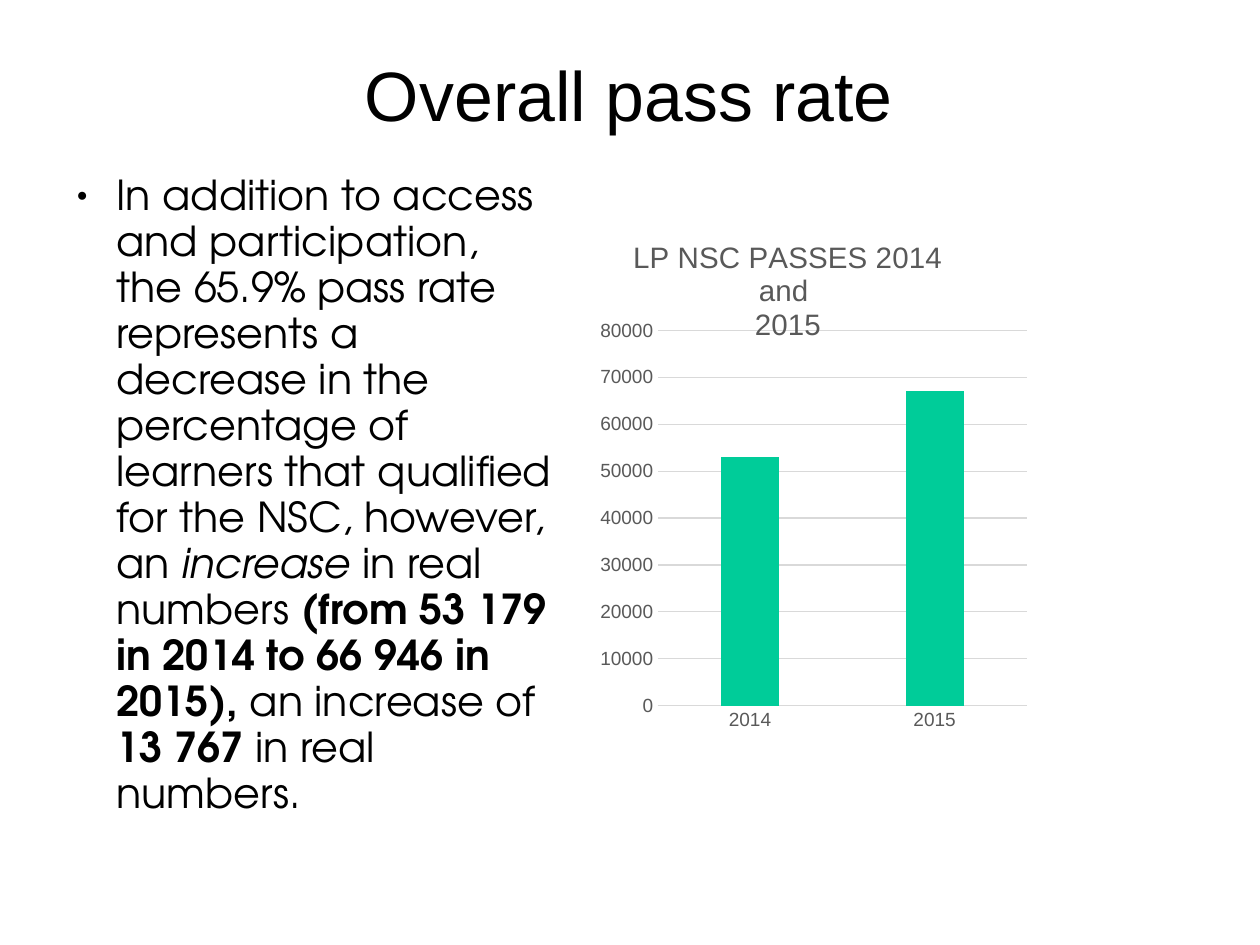
from dataclasses import dataclass

from lxml import etree
from pptx import Presentation
from pptx import util as u
from pptx.chart import data as chart_data
from pptx.dml.color import RGBColor
from pptx.enum import chart as charts, text
from pptx.oxml import ns


@dataclass(frozen=True)
class Theme:
    ink: str = "000000"
    muted: str = "595959"
    grid: str = "D9D9D9"
    bar: str = "00CC99"
    heading_font: str = "Arial"
    body_font: str = "TeX Gyre Adventor"
    title_size: float = 44
    body_size: float = 26
    chart_title_size: float = 18.6
    axis_size: float = 12
    line_spacing: float = 0.93


THEME = Theme()

PASS_RATE_RUNS = [
    ("In addition to access and participation, the 65.9% pass rate represents "
     "a decrease in the percentage of learners that qualified for the NSC, "
     "however, an ", {}),
    ("increase ", {"italic": True}),
    ("in real numbers ", {}),
    ("(from 53 179 in 2014 to 66 946 in 2015), ", {"bold": True}),
    ("an increase of ", {}),
    ("13 767 ", {"bold": True}),
    ("in real numbers.", {}),
]
CHART_TITLE_LINES = ["LP NSC PASSES 2014", "and ", "2015"]
PASSES = {"2014": 53000, "2015": 67000}


def format_font(font, size, color, name=THEME.heading_font, bold=False, italic=False):
    font.name = name
    font.size = u.Pt(size)
    font.bold = bold
    font.italic = italic
    font.color.rgb = RGBColor.from_string(color)


def add_run(paragraph, content, **font_format):
    run = paragraph.add_run()
    run.text = content
    format_font(run.font, **font_format)


def add_text_box(slide, box, anchor, align):
    """Add a box without margins and return its first paragraph."""
    frame = slide.shapes.add_textbox(*map(u.Inches, box)).text_frame
    frame.word_wrap = True
    frame.margin_left = frame.margin_right = 0
    frame.margin_top = frame.margin_bottom = 0
    frame.vertical_anchor = anchor
    paragraph = frame.paragraphs[0]
    paragraph.alignment = align
    paragraph.line_spacing = THEME.line_spacing
    return paragraph


def add_bullet(paragraph, margin, indent, percent):
    properties = paragraph._p.get_or_add_pPr()
    properties.set("marL", str(u.Inches(margin)))
    properties.set("indent", str(u.Inches(indent)))
    color = etree.SubElement(properties, ns.qn("a:buClr"))
    etree.SubElement(color, ns.qn("a:srgbClr"), val=THEME.ink)
    etree.SubElement(properties, ns.qn("a:buSzPct"), val=str(percent * 1000))
    etree.SubElement(properties, ns.qn("a:buFont"), typeface=THEME.heading_font)
    etree.SubElement(properties, ns.qn("a:buChar"), char="●")


def add_title(slide, box):
    paragraph = add_text_box(slide, box, text.MSO_ANCHOR.MIDDLE, text.PP_ALIGN.CENTER)
    add_run(paragraph, "Overall pass rate", size=THEME.title_size, color=THEME.ink)


def add_body(slide, box):
    paragraph = add_text_box(slide, box, text.MSO_ANCHOR.TOP, text.PP_ALIGN.LEFT)
    paragraph.space_after = u.Pt(14.2)
    add_bullet(paragraph, 0.47, -0.35, 45)
    for content, emphasis in PASS_RATE_RUNS:
        add_run(paragraph, content, size=THEME.body_size, color=THEME.ink,
                name=THEME.body_font, **emphasis)


def set_layout(parent, before, **settings):
    """Place a chart part by fractions of the chart, ahead of the named element."""
    for old in parent.findall(ns.qn("c:layout")):
        parent.remove(old)
    layout = etree.Element(ns.qn("c:layout"))
    manual = etree.SubElement(layout, ns.qn("c:manualLayout"))
    for name, value in settings.items():
        etree.SubElement(manual, ns.qn(f"c:{name}"), val=str(value))
    parent.find(ns.qn(before)).addprevious(layout)


def format_line(line, color):
    line.color.rgb = RGBColor.from_string(color)
    line.width = u.Pt(0.75)


def format_chart_title(chart):
    frame = chart.chart_title.text_frame
    for index, content in enumerate(CHART_TITLE_LINES):
        paragraph = frame.add_paragraph() if index else frame.paragraphs[0]
        paragraph.alignment = text.PP_ALIGN.CENTER
        add_run(paragraph, content, size=THEME.chart_title_size, color=THEME.muted)
    chart.chart_title.include_in_layout = False
    set_layout(chart.chart_title._element, "c:overlay",
               xMode="edge", yMode="edge", x=0.1, y=0.01)


def format_axes(chart):
    for axis in (chart.category_axis, chart.value_axis):
        axis.major_tick_mark = axis.minor_tick_mark = charts.XL_TICK_MARK.NONE
        format_font(axis.tick_labels.font, THEME.axis_size, THEME.muted)
    format_line(chart.category_axis.format.line, THEME.grid)
    values = chart.value_axis
    values.minimum_scale, values.maximum_scale = 0, 80000
    values.major_unit = 10000
    values.format.line.fill.background()
    format_line(values.major_gridlines.format.line, THEME.grid)


def add_passes_chart(slide, box):
    data = chart_data.CategoryChartData(number_format="General")
    data.categories = list(PASSES)
    data.add_series("Series 1", list(PASSES.values()))
    chart = slide.shapes.add_chart(
        charts.XL_CHART_TYPE.COLUMN_CLUSTERED, *map(u.Inches, box), data).chart
    chart.has_legend = False
    format_font(chart.font, 10, THEME.ink)
    format_chart_title(chart)
    format_axes(chart)
    plot = chart.plots[0]
    plot.vary_by_categories = False
    plot.gap_width, plot.overlap = 219, -27
    fill = plot.series[0].format.fill
    fill.solid()
    fill.fore_color.rgb = RGBColor.from_string(THEME.bar)
    set_layout(plot._element.getparent(), "c:barChart", layoutTarget="inner",
               xMode="edge", yMode="edge", x=0.16, y=0.18, w=0.79, h=0.67)


def main():
    presentation = Presentation()
    presentation.slide_width = u.Cm(28)
    presentation.slide_height = u.Cm(21)
    slide = presentation.slides.add_slide(presentation.slide_layouts[6])
    add_title(slide, (0.55, 0.35, 9.91, 1.02))
    add_body(slide, (0.55, 1.52, 4.29, 5.7))
    add_passes_chart(slide, (5.1, 2.01, 4.09, 4.9))
    presentation.save("out.pptx")


if __name__ == "__main__":
    main()
